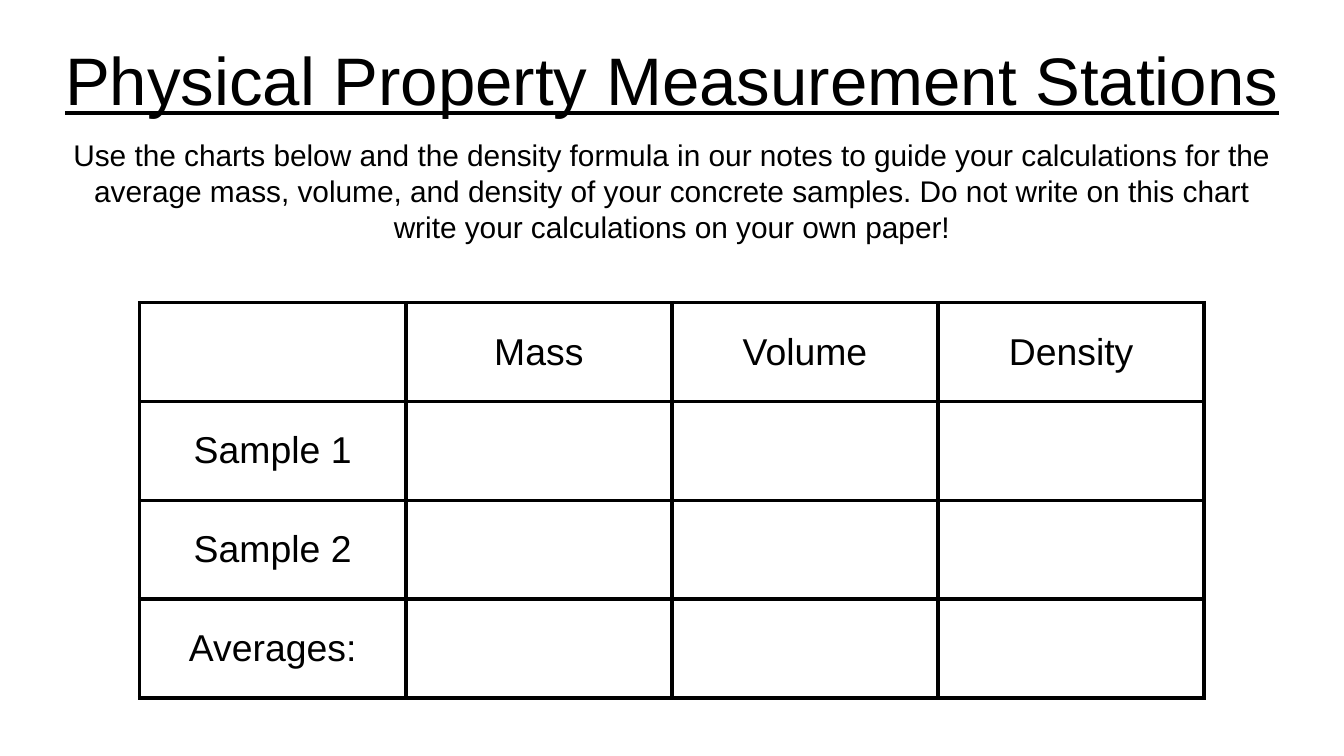
import pptx
import pptx.dml.color
import pptx.enum.text
import pptx.oxml
import pptx.oxml.ns
import pptx.util

Pt = pptx.util.Pt
ANCHOR = pptx.enum.text.MSO_ANCHOR
COLORS = {"ink": "000000", "paper": "FFFFFF"}
FONT = "Arial"
INSET = 7.2
BORDER_WIDTH = 2.25

TITLE = "Physical Property Measurement Stations"
INSTRUCTIONS = (
    "Use the charts below and the density formula in our notes to guide your "
    "calculations for the average mass, volume, and density of your concrete "
    "samples. Do not write on this chart write your calculations on your own paper!"
)
MEASUREMENTS = ["Mass", "Volume", "Density"]
SAMPLES = ["Sample 1", "Sample 2", "Averages:"]

SLIDE_WIDTH, SLIDE_HEIGHT = 720, 405
TEXT_WIDTH = 671
COLUMN_WIDTH, ROW_HEIGHT = 142.6, 53
TABLE_TOP = 162.1


def color(name):
    return pptx.dml.color.RGBColor.from_string(COLORS[name])


def style_paragraph(paragraph, size, underline=None):
    paragraph.alignment = pptx.enum.text.PP_ALIGN.CENTER
    paragraph.font.name = FONT
    paragraph.font.size = Pt(size)
    paragraph.font.underline = underline
    paragraph.font.color.rgb = color("ink")


def set_margins(target):
    for side in ("left", "top", "right", "bottom"):
        setattr(target, f"margin_{side}", Pt(INSET))


def add_text(slide, text, top, height, size, anchor, underline=None):
    left = (SLIDE_WIDTH - TEXT_WIDTH) / 2
    shape = slide.shapes.add_textbox(Pt(left), Pt(top), Pt(TEXT_WIDTH), Pt(height))
    frame = shape.text_frame
    frame.word_wrap = True
    frame.vertical_anchor = anchor
    set_margins(frame)
    frame.text = text
    style_paragraph(frame.paragraphs[0], size, underline)


def add_borders(cell):
    properties = cell._tc.get_or_add_tcPr()
    for position, side in enumerate(("lnL", "lnR", "lnT", "lnB")):
        line = pptx.oxml.parse_xml(
            f'<a:{side} {pptx.oxml.ns.nsdecls("a")} w="{int(Pt(BORDER_WIDTH))}">'
            f'<a:solidFill><a:srgbClr val="{COLORS["ink"]}"/></a:solidFill>'
            f'<a:prstDash val="solid"/></a:{side}>'
        )
        properties.insert(position, line)


def add_measurement_table(slide):
    rows = [["", *MEASUREMENTS]]
    rows += [[sample] + [""] * len(MEASUREMENTS) for sample in SAMPLES]
    width = COLUMN_WIDTH * len(rows[0])
    height = ROW_HEIGHT * len(rows)
    shape = slide.shapes.add_table(
        len(rows), len(rows[0]),
        Pt((SLIDE_WIDTH - width) / 2), Pt(TABLE_TOP), Pt(width), Pt(height),
    )
    table = shape.table
    table.first_row = table.horz_banding = False
    for column in table.columns:
        column.width = Pt(COLUMN_WIDTH)
    for row, labels in zip(table.rows, rows):
        row.height = Pt(ROW_HEIGHT)
        for cell, label in zip(row.cells, labels):
            cell.text = label
            cell.vertical_anchor = ANCHOR.MIDDLE
            set_margins(cell)
            cell.fill.background()
            style_paragraph(cell.text_frame.paragraphs[0], 20)
            add_borders(cell)


def main():
    presentation = pptx.Presentation()
    presentation.slide_width = Pt(SLIDE_WIDTH)
    presentation.slide_height = Pt(SLIDE_HEIGHT)
    slide = presentation.slides.add_slide(presentation.slide_layouts[6])
    slide.background.fill.solid()
    slide.background.fill.fore_color.rgb = color("paper")
    add_text(slide, TITLE, 8.6, 62.6, 36, ANCHOR.BOTTOM, underline=True)
    add_text(slide, INSTRUCTIONS, 66.2, 87.1, 16, ANCHOR.TOP)
    add_measurement_table(slide)
    presentation.save("out.pptx")


if __name__ == "__main__":
    main()
